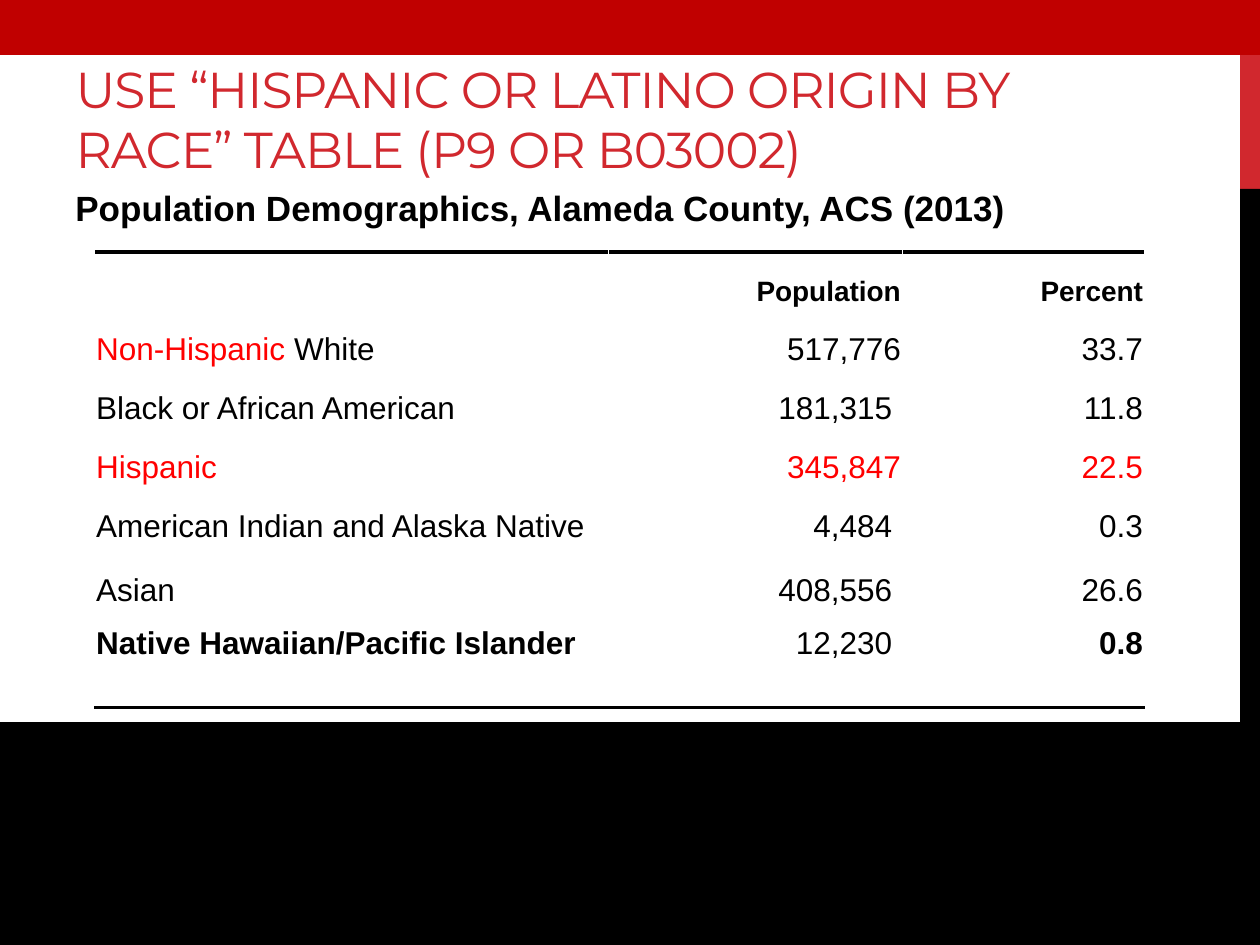
from dataclasses import dataclass

from lxml.etree import SubElement
from pptx import Presentation
from pptx.dml.color import RGBColor
from pptx.enum.shapes import MSO_SHAPE as Shape
from pptx.enum.text import MSO_ANCHOR as Anchor, MSO_AUTO_SIZE as AutoSize, PP_ALIGN as Align
from pptx.oxml import parse_xml
from pptx.oxml.ns import nsdecls, qn
from pptx.util import Cm, Pt

COLORS = {
    "black": "000000",
    "white": "FFFFFF",
    "title": "D1282E",
    "banner": "C00000",
    "highlight": "FF0000",
}
COLUMN_WIDTHS = (10.36, 5.92, 4.88)
HEADER_HEIGHT = 1.47


@dataclass(frozen=True)
class Band:
    left: float
    top: float
    width: float
    height: float
    color: str
    outlined: bool = False


@dataclass(frozen=True)
class Group:
    """One population group; highlighted is the leading part of its label in red."""
    label: str
    population: str
    percent: str
    height: float = 1.19
    highlighted: str = ""
    color: str = "black"
    bold: bool = False


BANDS = (
    Band(25, 0, 0.4, 3.81, "title"),
    Band(25, 3.81, 0.4, 15.24, "black"),
    Band(0, 14.6, 25.4, 4.45, "black", outlined=True),
    Band(0, 0, 25.4, 1.07, "banner", outlined=True),
)
GROUPS = (
    Group(" White", "517,776", "33.7", highlighted="Non-Hispanic"),
    Group("Black or African American", "181,315 ", "11.8"),
    Group("Hispanic", "345,847", "22.5", color="highlight"),
    Group("American Indian and Alaska Native", "4,484 ", "0.3", height=1.3),
    Group("Asian", "408,556 ", "26.6", height=1.07),
    Group("Native Hawaiian/Pacific Islander", "12,230 ", "0.8", height=1.78, bold=True),
)


def rgb(color: str) -> RGBColor:
    return RGBColor.from_string(COLORS[color])


def add_text(paragraph, text: str, *, size: float = 18, font: str = "Arial",
             color: str = "black", bold: bool = False, spacing: int = 0) -> None:
    """Append a run; spacing is in hundredths of a point."""
    run = paragraph.add_run()
    run.text = text
    run.font.size = Pt(size)
    run.font.name = font
    run.font.bold = bold
    run.font.color.rgb = rgb(color)
    if spacing:
        run._r.get_or_add_rPr().set("spc", str(spacing))


def add_band(slide, band: Band) -> None:
    bar = slide.shapes.add_shape(Shape.RECTANGLE, Cm(band.left), Cm(band.top),
                                 Cm(band.width), Cm(band.height))
    bar.shadow.inherit = False
    bar.fill.solid()
    bar.fill.fore_color.rgb = rgb(band.color)
    if band.outlined:
        bar.line.color.rgb = rgb(band.color)
        bar.line.width = Pt(2.25)
    else:
        bar.line.fill.background()


def add_border(cell, side: str) -> None:
    """Rule one side of a cell: "T" for top or "B" for bottom."""
    border = parse_xml(f'<a:ln{side} {nsdecls("a")} w="{Pt(2)}"/>')
    fill = SubElement(border, qn("a:solidFill"))
    SubElement(fill, qn("a:srgbClr"), val=COLORS["black"])
    cell._tc.get_or_add_tcPr().insert(0, border)


def format_cell(cell, align: Align, anchor: Anchor = Anchor.TOP):
    """Set up the cell and return its paragraph."""
    cell.margin_left = cell.margin_right = cell.margin_top = Cm(0.03)
    cell.margin_bottom = 0
    cell.vertical_anchor = anchor
    cell.fill.solid()
    cell.fill.fore_color.rgb = rgb("white")
    paragraph = cell.text_frame.paragraphs[0]
    paragraph.alignment = align
    paragraph.line_spacing = 1.15
    paragraph.space_after = Pt(10)
    return paragraph


def add_title(slide) -> None:
    title = slide.shapes.title
    title.left, title.top, title.width, title.height = Cm(1.27), Cm(1.83), Cm(22.43), Cm(1.9)
    frame = title.text_frame
    frame.word_wrap = True
    frame.auto_size = AutoSize.NONE
    frame.vertical_anchor = Anchor.BOTTOM
    heading = frame.paragraphs[0]
    heading.alignment = Align.LEFT
    add_text(heading, "USE “HISPANIC OR LATINO ORIGIN BY RACE” TABLE (P9 OR B03002)",
             size=28.8, font="Montserrat", color="title", spacing=-60)


def add_caption(slide) -> None:
    caption = slide.shapes.add_textbox(Cm(1.27), Cm(3.63), Cm(19.41), Cm(1.12))
    caption.text_frame.word_wrap = False
    caption.text_frame.auto_size = AutoSize.SHAPE_TO_FIT_TEXT
    add_text(caption.text_frame.paragraphs[0],
             "Population Demographics, Alameda County, ACS (2013)", size=20, bold=True)


def add_demographics(slide) -> None:
    heights = [HEADER_HEIGHT, *(group.height for group in GROUPS)]
    table = slide.shapes.add_table(len(heights), len(COLUMN_WIDTHS), Cm(1.91), Cm(5.08),
                                   Cm(sum(COLUMN_WIDTHS)), Cm(sum(heights))).table
    table.first_row = table.horz_banding = False
    for column, width in zip(table.columns, COLUMN_WIDTHS):
        column.width = Cm(width)
    for row, height in zip(table.rows, heights):
        row.height = Cm(height)

    for column, heading in enumerate(("", "Population", "Percent")):
        paragraph = format_cell(table.cell(0, column), Align.RIGHT, Anchor.MIDDLE)
        if heading:
            add_text(paragraph, heading, size=16, bold=True)
        add_border(table.cell(0, column), "T")
        add_border(table.cell(len(GROUPS), column), "B")

    for row, group in enumerate(GROUPS, start=1):
        label = format_cell(table.cell(row, 0), Align.LEFT)
        if group.highlighted:
            add_text(label, group.highlighted, color="highlight")
        add_text(label, group.label, color=group.color, bold=group.bold)
        population = format_cell(table.cell(row, 1), Align.RIGHT)
        add_text(population, group.population, color=group.color)
        percent = format_cell(table.cell(row, 2), Align.RIGHT)
        add_text(percent, group.percent, color=group.color, bold=group.bold)


def main() -> None:
    deck = Presentation()
    deck.slide_width, deck.slide_height = Cm(25.4), Cm(19.05)
    slide = deck.slides.add_slide(deck.slide_layouts.get_by_name("Title Only"))
    for band in BANDS:
        add_band(slide, band)
    add_title(slide)
    add_caption(slide)
    add_demographics(slide)
    deck.save("out.pptx")


if __name__ == "__main__":
    main()
